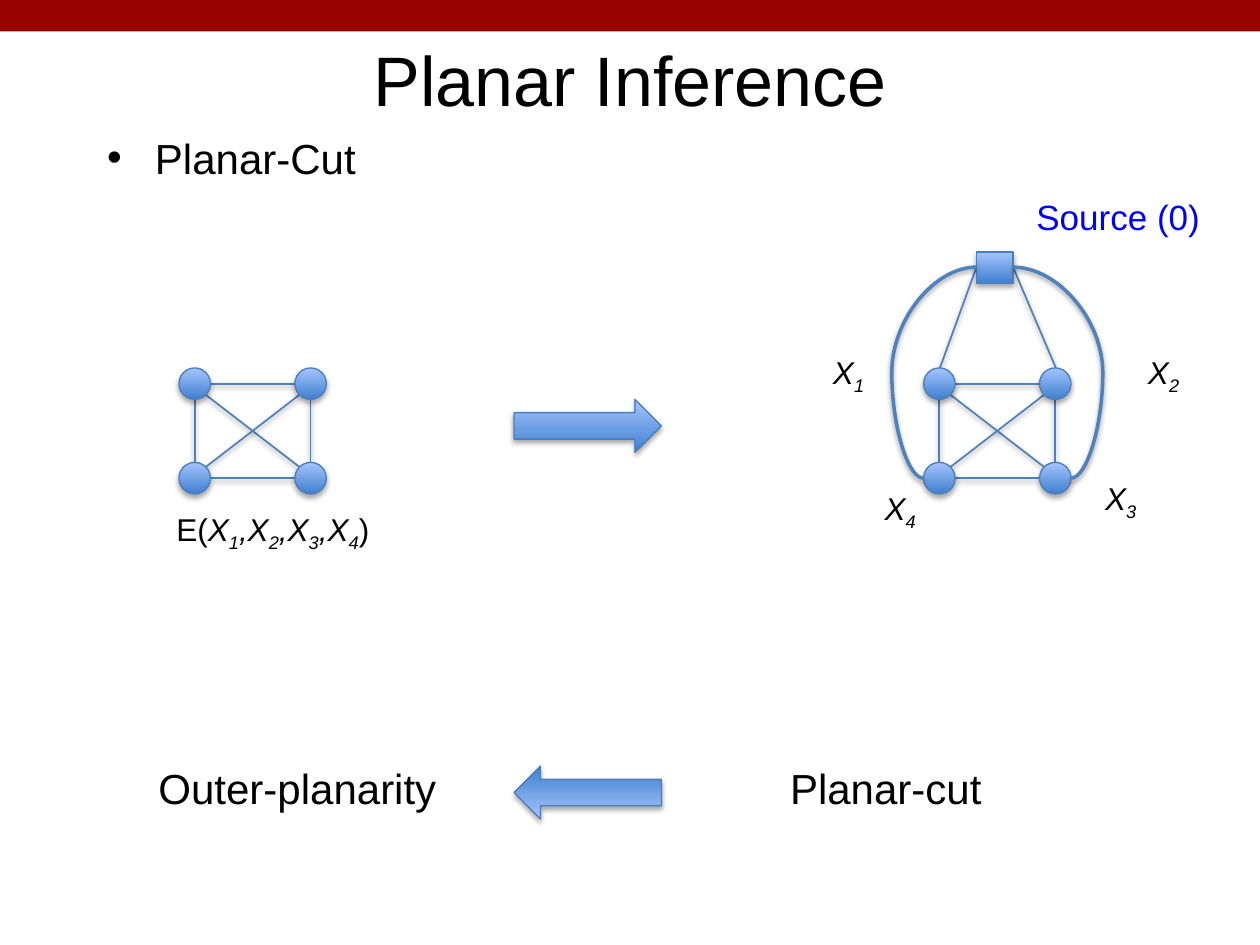
"""Build the Planar Inference slide with its two graph diagrams."""
from lxml.etree import SubElement
from pptx import Presentation
from pptx.dml.color import RGBColor
from pptx.enum.shapes import MSO_CONNECTOR as Connector, MSO_SHAPE as Shape
from pptx.enum.text import MSO_ANCHOR as Anchor, PP_ALIGN as Align
from pptx.oxml.ns import qn
from pptx.util import Inches, Pt

COLORS = {
    "banner": "990000", "text": "000000", "source": "0000FF", "edge": "4F81BD",
    "outline": "4B7EBC", "dark": "3F80CE", "light": "A4C4FF", "shadow": "000000",
}
NODE = 0.25
RADIUS = NODE / 2
COLUMN_GAP, ROW_GAP = 0.92, 0.75
TOP = 2.92
DIAGONAL = 0.09


def color(name):
    return RGBColor.from_string(COLORS[name])


def write(paragraph, text, size=18, fill="text", italic=False, subscript=False):
    run = paragraph.add_run()
    run.text = text
    font = run.font
    font.name, font.size, font.italic = "Arial", Pt(size), italic
    font.color.rgb = color(fill)
    if subscript:
        run._r.get_or_add_rPr().set("baseline", "-25000")


class SlideBuilder:
    def __init__(self, presentation):
        self.slide = presentation.slides.add_slide(presentation.slide_layouts[1])
        self.shapes = self.slide.shapes

    def add_shadow(self, effects, alpha, distance):
        shadow = SubElement(effects, qn("a:outerShdw"), blurRad=str(Pt(3.1)),
                            dist=str(Pt(distance)), dir="5400000", rotWithShape="0")
        tint = SubElement(shadow, qn("a:srgbClr"), val=COLORS["shadow"])
        SubElement(tint, qn("a:alpha"), val=str(alpha * 1000))

    def place(self, placeholder, left, top, width, height):
        placeholder.left, placeholder.top = Inches(left), Inches(top)
        placeholder.width, placeholder.height = Inches(width), Inches(height)
        return placeholder.text_frame

    def title(self, text):
        frame = self.place(self.shapes.title, 0.75, 0.25, 8.5, 0.75)
        frame.vertical_anchor = Anchor.MIDDLE
        frame.paragraphs[0].alignment = Align.CENTER
        write(frame.paragraphs[0], text, size=40)

    def bullet(self, text):
        frame = self.place(self.slide.placeholders[1], 0.75, 1, 8.5, 6)
        paragraph = frame.paragraphs[0]
        properties = paragraph._p.get_or_add_pPr()
        properties.set("marL", str(Inches(0.38)))
        properties.set("indent", str(Inches(-0.38)))
        SubElement(properties, qn("a:buChar"), char="•")
        paragraph.space_before = Pt(0)
        write(paragraph, text, size=24)

    def banner(self):
        banner = self.shapes.add_shape(Shape.RECTANGLE, 0, 0, Inches(10), Inches(0.25))
        banner.shadow.inherit = False
        banner.fill.solid()
        banner.fill.fore_color.rgb = color("banner")
        banner.line.fill.background()

    def solid(self, kind, left, top, width, height, rotation=0):
        shape = self.shapes.add_shape(kind, Inches(left), Inches(top),
                                      Inches(width), Inches(height))
        shape.rotation = rotation
        shape.fill.gradient()
        shape.fill.gradient_angle = 90
        for stop, name in zip(shape.fill.gradient_stops, ("dark", "light")):
            stop.color.rgb = color(name)
        shape.line.color.rgb = color("outline")
        shape.line.width = Pt(0.75)
        shape.shadow.inherit = False
        self.add_shadow(shape._element.spPr.find(qn("a:effectLst")), 35, 1.8)

    def edge(self, start, end, bend=None):
        kind = Connector.CURVE if bend else Connector.STRAIGHT
        line = self.shapes.add_connector(kind, *map(Inches, start + end))
        line.line.color.rgb = color("edge")
        line.line.width = Pt(2 if bend else 1)
        properties = line._element.spPr
        if bend:
            adjustments = properties.find(qn("a:prstGeom")).find(qn("a:avLst"))
            SubElement(adjustments, qn("a:gd"), name="adj1",
                       fmla=f"val {round(bend * 100000)}")
        self.add_shadow(SubElement(properties, qn("a:effectLst")), 38, 1.6)

    def textbox(self, left, top, width, height=0.4):
        frame = self.shapes.add_textbox(Inches(left), Inches(top),
                                        Inches(width), Inches(height)).text_frame
        frame.word_wrap = False
        paragraph = frame.paragraphs[0]
        paragraph.alignment = Align.CENTER
        return paragraph

    def variable(self, paragraph, name, index):
        write(paragraph, name, italic=True)
        write(paragraph, str(index), italic=True, subscript=True)

    def square_graph(self, left):
        x1, y1 = left + RADIUS, TOP + RADIUS
        x2, y2 = x1 + COLUMN_GAP, y1 + ROW_GAP
        for y in (y1, y2):
            self.edge((x1 + RADIUS, y), (x2 - RADIUS, y))
        for x in (x1, x2):
            self.edge((x, y1 + RADIUS), (x, y2 - RADIUS))
        near, far = x1 + DIAGONAL, x2 - DIAGONAL
        upper, lower = y1 + DIAGONAL, y2 - DIAGONAL
        self.edge((near, upper), (far, lower))
        self.edge((near, lower), (far, upper))
        for x in (x1, x2):
            for y in (y1, y2):
                self.solid(Shape.OVAL, x - RADIUS, y - RADIUS, NODE, NODE)


def main():
    presentation = Presentation()
    presentation.slide_width, presentation.slide_height = Inches(10), Inches(7.5)
    builder = SlideBuilder(presentation)
    builder.banner()
    builder.title("Planar Inference")
    builder.bullet("Planar-Cut")

    builder.square_graph(1.42)
    energy = builder.textbox(1.3, 4, 1.8)
    write(energy, "E(")
    for index in range(1, 5):
        builder.variable(energy, "X" if index == 1 else ",X", index)
    write(energy, ") ")

    source_left, source_right, source_y = (7.75, 2.12), (8.04, 2.12), TOP + ROW_GAP + RADIUS
    builder.edge(source_left, (7.46, TOP))
    builder.edge(source_right, (8.38, TOP))
    builder.square_graph(7.33)
    builder.solid(Shape.RECTANGLE, 7.75, 2, 0.29, 0.25)
    builder.edge(source_right, (8.5, source_y), bend=1.55)
    builder.edge(source_left, (7.33, source_y), bend=1.6)
    write(builder.textbox(8.09, 1.5, 1.57, 0.43), "Source (0) ", size=20, fill="source")
    corners = [(6.42, 2.75), (8.92, 2.75), (8.58, 3.75), (6.83, 3.83)]
    for index, (left, top) in enumerate(corners, 1):
        builder.variable(builder.textbox(left, top, 0.63), "X", index)

    builder.solid(Shape.RIGHT_ARROW, 4.08, 3.17, 1.17, 0.42)
    builder.solid(Shape.RIGHT_ARROW, 4.08, 6.08, 1.17, 0.42, rotation=180)
    write(builder.textbox(1.1, 6, 2.52, 0.5), "Outer-planarity", size=24)
    write(builder.textbox(6.16, 6, 1.74, 0.5), "Planar-cut", size=24)
    presentation.save("out.pptx")


if __name__ == "__main__":
    main()
